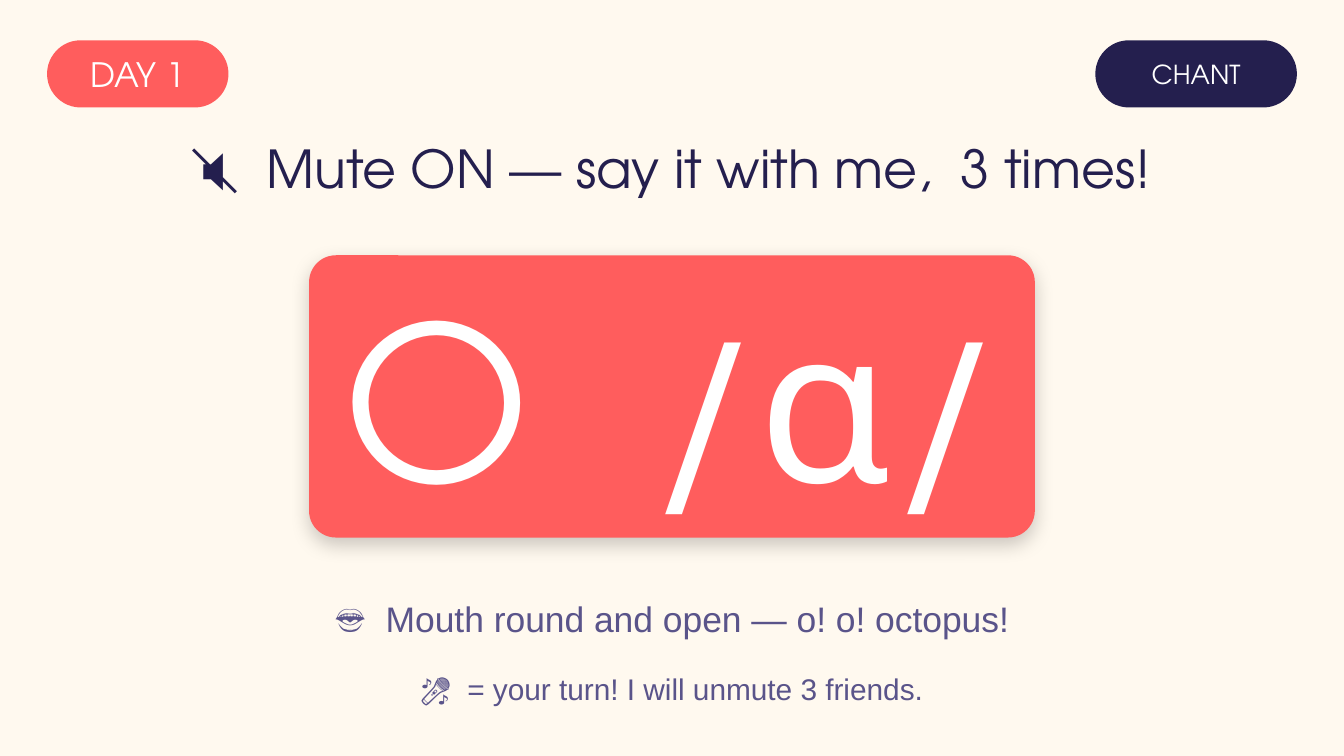
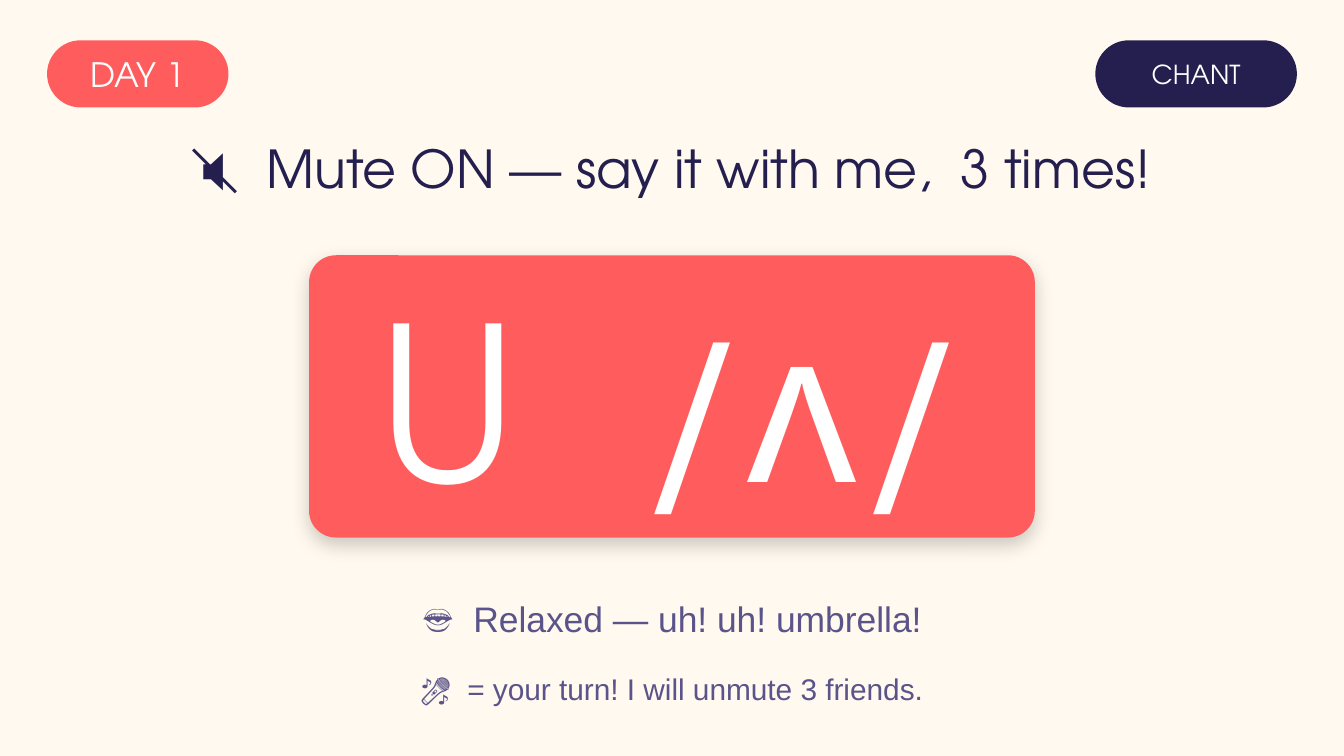
from dataclasses import dataclass

from lxml import etree
from pptx import Presentation
from pptx.dml.color import RGBColor
from pptx.enum.shapes import MSO_SHAPE
from pptx.enum.text import MSO_ANCHOR, MSO_AUTO_SIZE, PP_ALIGN
from pptx.oxml.ns import qn
from pptx.shapes.autoshape import Shape
from pptx.slide import Slide
from pptx.util import Inches, Length, Pt

ROUNDED = MSO_SHAPE.ROUNDED_RECTANGLE
MIDDLE = MSO_ANCHOR.MIDDLE
CENTER = PP_ALIGN.CENTER
NO_AUTOFIT = MSO_AUTO_SIZE.NONE

CREAM = RGBColor(0xFF, 0xF9, 0xEF)
CORAL = RGBColor(0xFF, 0x5D, 0x5D)
NAVY = RGBColor(0x24, 0x1F, 0x4E)
VIOLET = RGBColor(0x5A, 0x54, 0x8A)
WHITE = RGBColor(0xFF, 0xFF, 0xFF)

DISPLAY_FONT = "TeX Gyre Adventor"
BODY_FONT = "Arial"

SLIDE_WIDTH = Inches(10)
SLIDE_HEIGHT = SLIDE_WIDTH * 9 // 16
TITLE_ONLY = 5

TITLE = "🔇  Mute ON — say it with me,  3 times!"
YOUR_TURN = "🎤  = your turn! I will unmute 3 friends."


@dataclass(frozen=True)
class Panel:
    """A rounded panel with centred white text."""

    left: Length
    top: Length
    width: Length
    height: Length
    fill: RGBColor
    size: float
    corner: float = 0.5


@dataclass(frozen=True)
class Chant:
    """The letter sound and mouth hint of one slide."""

    sound: str
    hint: str


DAY_PILL = Panel(Inches(0.35), Inches(0.3), Inches(1.35), Inches(0.5), CORAL, 18)
CHANT_PILL = Panel(Inches(8.15), Inches(0.3), Inches(1.5), Inches(0.5), NAVY, 14)
SOUND_CARD = Panel(Inches(2.3), Inches(1.9), Inches(5.4), Inches(2.1), CORAL, 115, 0.095)

CHANTS = (
    Chant("O  /ɑ/", "👄  Mouth round and open — o! o! octopus!"),
    Chant("U  /ʌ/", "👄  Relaxed — uh! uh! umbrella!"),
)


def write_text(shape: Shape, text: str, size: float, font: str, color: RGBColor) -> None:
    """Write one centred line into a shape."""
    frame = shape.text_frame
    frame.word_wrap = True
    frame.auto_size = NO_AUTOFIT
    frame.vertical_anchor = MIDDLE
    paragraph = frame.paragraphs[0]
    paragraph.alignment = CENTER
    run = paragraph.add_run()
    run.text = text
    run.font.size = Pt(size)
    run.font.name = font
    run.font.color.rgb = color


def add_panel(slide: Slide, panel: Panel, text: str) -> Shape:
    """Draw a rounded panel with its text."""
    shape = slide.shapes.add_shape(ROUNDED, panel.left, panel.top, panel.width, panel.height)
    shape.adjustments[0] = panel.corner
    shape.shadow.inherit = False
    shape.fill.solid()
    shape.fill.fore_color.rgb = panel.fill
    shape.line.fill.background()
    write_text(shape, text, panel.size, DISPLAY_FONT, WHITE)
    frame = shape.text_frame
    frame.margin_left = frame.margin_right = frame.margin_top = frame.margin_bottom = 0
    return shape


def add_soft_shadow(shape: Shape) -> None:
    """Give a shape a faint shadow falling straight down."""
    effects = shape._element.spPr.find(qn("a:effectLst"))
    shadow = etree.SubElement(
        effects,
        qn("a:outerShdw"),
        blurRad=str(Pt(10)),
        dist=str(Pt(4)),
        dir="5400000",
        algn="ctr",
        rotWithShape="0",
    )
    color = etree.SubElement(shadow, qn("a:srgbClr"), val="000000")
    etree.SubElement(color, qn("a:alpha"), val="20000")


def add_title(slide: Slide) -> None:
    """Place and fill the title placeholder."""
    title = slide.shapes.title
    title.left, title.top = Inches(0), Inches(0.95)
    title.width, title.height = SLIDE_WIDTH, Inches(0.6)
    write_text(title, TITLE, 28, DISPLAY_FONT, NAVY)


def add_caption(slide: Slide, text: str, top: Length, height: Length, size: float) -> None:
    """Add a full-width caption."""
    box = slide.shapes.add_textbox(Inches(0), top, SLIDE_WIDTH, height)
    write_text(box, text, size, BODY_FONT, VIOLET)


def add_chant_slide(presentation: Presentation, chant: Chant) -> None:
    """Build one chant slide."""
    slide = presentation.slides.add_slide(presentation.slide_layouts[TITLE_ONLY])
    add_panel(slide, DAY_PILL, "DAY 1")
    add_panel(slide, CHANT_PILL, "CHANT")
    add_title(slide)
    add_soft_shadow(add_panel(slide, SOUND_CARD, chant.sound))
    add_caption(slide, chant.hint, Inches(4.35), Inches(0.5), 19)
    add_caption(slide, YOUR_TURN, Inches(4.9), Inches(0.45), 16)


def main() -> None:
    """Build and save the presentation."""
    presentation = Presentation()
    presentation.slide_width = SLIDE_WIDTH
    presentation.slide_height = SLIDE_HEIGHT
    background = presentation.slide_master.background.fill
    background.solid()
    background.fore_color.rgb = CREAM
    for chant in CHANTS:
        add_chant_slide(presentation, chant)
    presentation.save("out.pptx")


if __name__ == "__main__":
    main()
